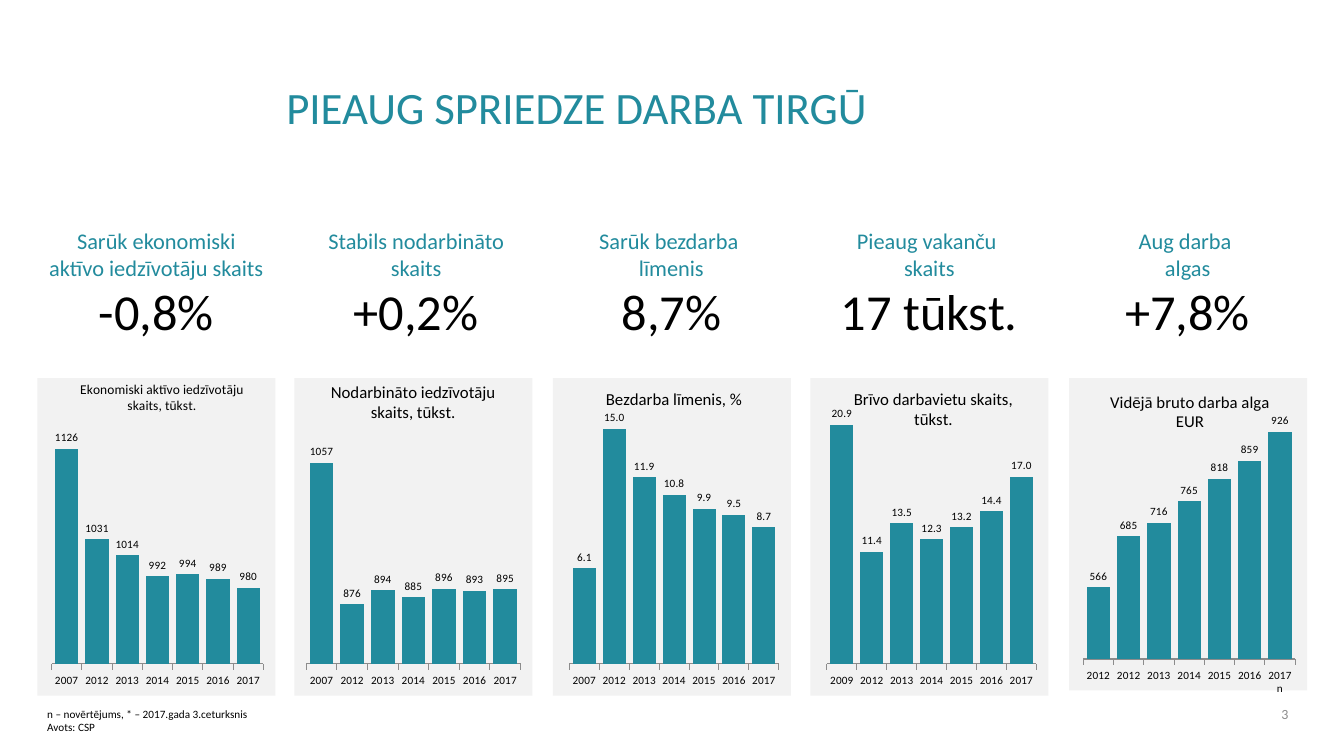
from dataclasses import dataclass

from lxml.etree import SubElement
from pptx import Presentation
from pptx.chart.data import CategoryChartData
from pptx.dml.color import RGBColor
from pptx.enum.chart import XL_CHART_TYPE, XL_LABEL_POSITION, XL_TICK_LABEL_POSITION, XL_TICK_MARK
from pptx.enum.text import MSO_ANCHOR, MSO_AUTO_SIZE, PP_ALIGN
from pptx.oxml import parse_xml
from pptx.oxml.ns import nsdecls, qn
from pptx.util import Cm, Pt


@dataclass(frozen=True)
class Theme:
    font: str = "Calibri"
    teal: RGBColor = RGBColor(0x22, 0x8B, 0x9D)
    black: RGBColor = RGBColor(0, 0, 0)
    gray: RGBColor = RGBColor(0x8C, 0x8C, 0x8C)
    panel: RGBColor = RGBColor(0xF2, 0xF2, 0xF2)
    title: float = 32
    figure: float = 36
    heading: float = 16
    chart_title: float = 12
    small_chart_title: float = 9.6
    page: float = 10
    note: float = 8


theme = Theme()


def add_text(left, top, width, height, lines, align):
    frame = slide.shapes.add_textbox(Cm(left), Cm(top), Cm(width), Cm(height)).text_frame
    frame.word_wrap = True
    frame.text = "\n".join(text for text, size, color in lines)
    for paragraph, (text, size, color) in zip(frame.paragraphs, lines):
        paragraph.alignment = align
        font = paragraph.runs[0].font
        font.name, font.size, font.color.rgb = theme.font, Pt(size), color
    return frame


def set_layout(parent, index, **settings):
    for old in parent.findall(qn("c:layout")):
        parent.remove(old)
    layout = parse_xml(f"<c:layout {nsdecls('c')}><c:manualLayout/></c:layout>")
    for tag, value in settings.items():
        SubElement(layout[0], qn(f"c:{tag}")).set("val", str(value))
    parent.insert(index, layout)


prs = Presentation()
prs.slide_width, prs.slide_height = Cm(33.87), Cm(19.05)
slide = prs.slides.add_slide(prs.slide_layouts[5])

headline = slide.shapes.title
headline.left, headline.top, headline.width, headline.height = Cm(6.96), Cm(0.91), Cm(18.57), Cm(2.59)
headline.text_frame.text = "PIEAUG SPRIEDZE DARBA TIRGŪ"
headline.text_frame.auto_size = MSO_AUTO_SIZE.NONE
headline.text_frame.vertical_anchor = MSO_ANCHOR.BOTTOM
headline_line = headline.text_frame.paragraphs[0]
headline_line.alignment = PP_ALIGN.LEFT
headline_line.line_spacing = 0.9
headline_font = headline_line.runs[0].font
headline_font.name, headline_font.size, headline_font.color.rgb = theme.font, Pt(theme.title), theme.teal

column_width = 6
years = ["2007", "2012", "2013", "2014", "2015", "2016", "2017"]
indicators = [
    dict(text_left=0.94, chart_left=0.94, heading=["Sarūk ekonomiski aktīvo iedzīvotāju skaits"],
         figure="-0,8%", title="Ekonomiski aktīvo iedzīvotāju skaits, tūkst.",
         title_size=theme.small_chart_title, title_at=(0.17, 0), years=years,
         values=[1126, 1031, 1014, 992, 994, 989, 980],
         scale=(900, 1150), number_format="0", plot=(0.06, 0.15, 0.89, 0.75)),
    dict(text_left=7.49, chart_left=7.42, heading=["Stabils nodarbināto skaits"],
         figure="+0,2%", title="Nodarbināto iedzīvotāju skaits, tūkst.",
         title_size=theme.chart_title, title_at=(0.14, 0), years=years,
         values=[1057, 876, 894, 885, 896, 893, 895],
         scale=(800, 1100), number_format="0", plot=(0.05, 0.16, 0.9, 0.74)),
    dict(text_left=13.92, chart_left=13.93, heading=["Sarūk bezdarba ", "līmenis"],
         figure="8,7%", title="Bezdarba līmenis, %",
         title_size=theme.chart_title, title_at=(0.21, 0.02), years=years,
         values=[6.1, 15, 11.9, 10.8, 9.9, 9.5, 8.7],
         scale=(0, 16), number_format="#,##0.0", plot=(0.07, 0.11, 0.88, 0.79)),
    dict(text_left=20.42, chart_left=20.42, heading=["Pieaug vakanču ", "skaits"],
         figure="17 tūkst.", title="Brīvo darbavietu skaits, tūkst.",
         title_size=theme.chart_title, title_at=(0.17, 0.02), years=["2009"] + years[1:],
         values=[20.9, 11.4, 13.5, 12.3, 13.2, 14.4, 17],
         scale=(3, 22), number_format="#,##0.0", plot=(0.07, 0.1, 0.88, 0.8)),
    dict(text_left=26.93, chart_left=26.94, heading=["Aug darba ", "algas"],
         figure="+7,8%", title="Vidējā bruto darba alga EUR",
         title_size=theme.chart_title, title_at=(0.16, 0.03), years=["2012"] + years[1:-1] + ["2017 n"],
         values=[566, 685, 716, 765, 818, 859, 926],
         scale=(400, 1000), number_format="#,##0", plot=(0.06, 0.07, 0.89, 0.83)),
]

for indicator in indicators:
    lines = [(text, theme.heading, theme.teal) for text in indicator["heading"]]
    lines.append((indicator["figure"], theme.figure, theme.black))
    add_text(indicator["text_left"], 5.59, column_width, 3.18, lines, PP_ALIGN.CENTER)

    data = CategoryChartData()
    data.categories = indicator["years"]
    data.add_series("Series 1", indicator["values"])
    chart = slide.shapes.add_chart(XL_CHART_TYPE.COLUMN_CLUSTERED, Cm(indicator["chart_left"]), Cm(9.53),
                                   Cm(column_width), Cm(8), data).chart
    chart.font.name, chart.font.size, chart.font.color.rgb = theme.font, Pt(theme.note), theme.black
    chart.has_legend = False

    chart.has_title = True
    chart.chart_title.text_frame.text = indicator["title"]
    title_font = chart.chart_title.text_frame.paragraphs[0].runs[0].font
    title_font.name, title_font.size, title_font.bold = theme.font, Pt(indicator["title_size"]), False
    title_font.color.rgb = theme.black
    title_x, title_y = indicator["title_at"]
    set_layout(chart.chart_title._element, 1, xMode="edge", yMode="edge", x=title_x, y=title_y)

    year_axis = chart.category_axis
    year_axis.has_major_gridlines = False
    year_axis.major_tick_mark = XL_TICK_MARK.OUTSIDE
    year_axis.tick_label_position = XL_TICK_LABEL_POSITION.LOW
    year_axis.format.line.color.rgb = theme.gray
    value_axis = chart.value_axis
    value_axis.has_major_gridlines = False
    value_axis.visible = False
    value_axis.minimum_scale, value_axis.maximum_scale = indicator["scale"]

    bars = chart.plots[0]
    bars.gap_width = 30
    bars.vary_by_categories = False
    bars.series[0].format.fill.solid()
    bars.series[0].format.fill.fore_color.rgb = theme.teal
    bars.has_data_labels = True
    labels = bars.data_labels
    labels.show_value = True
    labels.position = XL_LABEL_POSITION.OUTSIDE_END
    labels.number_format = indicator["number_format"]
    labels.number_format_is_linked = False

    plot_area = chart._chartSpace.chart.plotArea
    x, y, w, h = indicator["plot"]
    set_layout(plot_area, 0, layoutTarget="inner", xMode="edge", yMode="edge", x=x, y=y, w=w, h=h)
    panel_xml = (f"<c:spPr {nsdecls('c', 'a')}><a:solidFill><a:srgbClr val='{theme.panel}'/></a:solidFill>"
                 "<a:ln><a:noFill/></a:ln></c:spPr>")
    plot_area.append(parse_xml(panel_xml))
    chart._chartSpace.find(qn("c:txPr")).addprevious(parse_xml(panel_xml))

notes = ["n – novērtējums, * – 2017.gada 3.ceturksnis", "Avots: CSP"]
add_text(0.94, 17.7, column_width, 0.94, [(note, theme.note, theme.black) for note in notes], PP_ALIGN.LEFT)
page_number = add_text(31.6, 17.58, 1.12, 0.84, [("3", theme.page, theme.gray)], PP_ALIGN.RIGHT)
page_number.vertical_anchor = MSO_ANCHOR.MIDDLE

prs.save("out.pptx")
